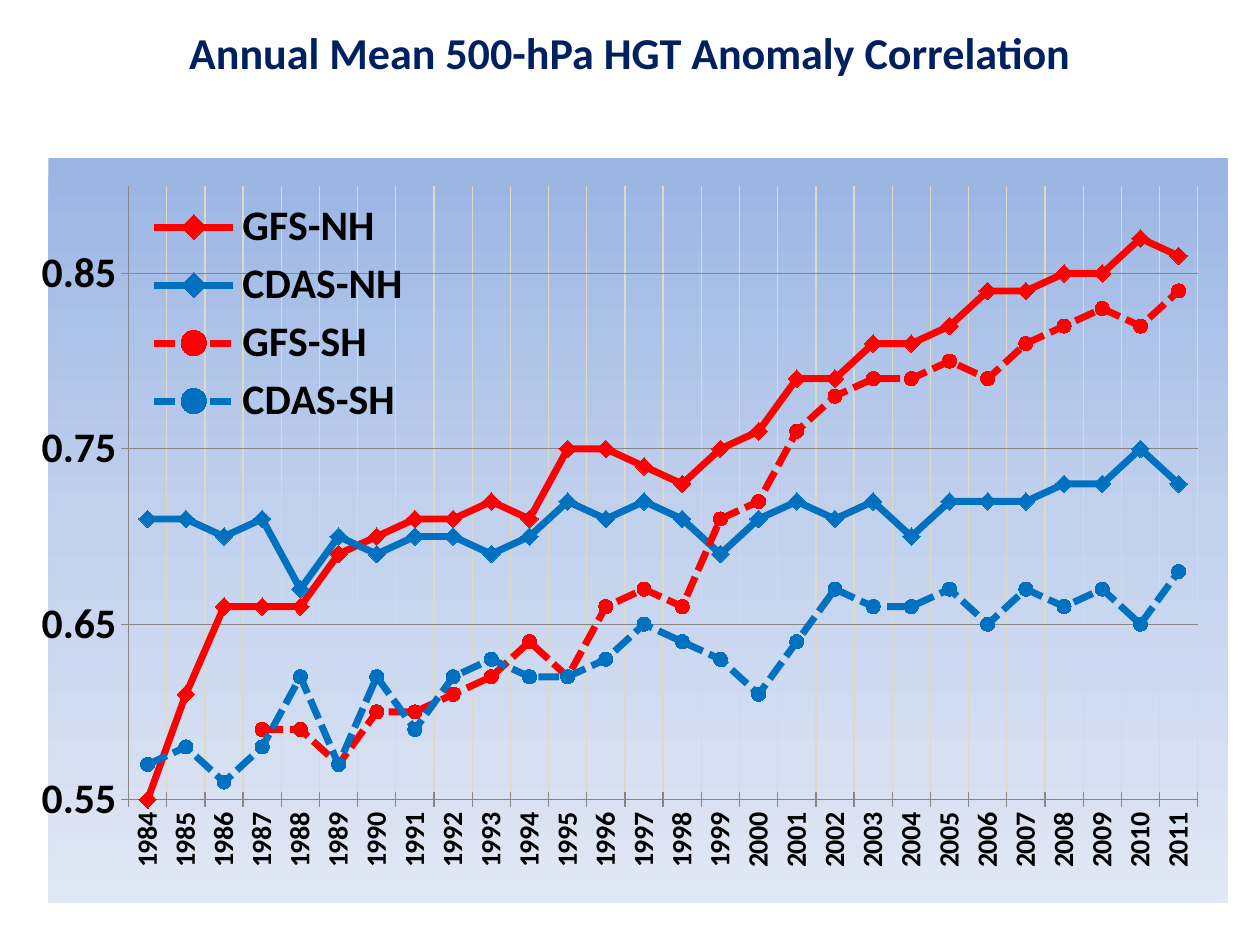
from lxml import etree
from pptx import Presentation
from pptx import util as u
from pptx.chart.data import CategoryChartData
from pptx.dml.color import RGBColor
from pptx.enum import chart as charts, dml, text
from pptx.oxml import parse_xml
from pptx.oxml.ns import nsdecls, qn

FONT = "Calibri"
RED, BLUE = "FF0000", "0070C0"
DIAMOND, CIRCLE = charts.XL_MARKER_STYLE.DIAMOND, charts.XL_MARKER_STYLE.CIRCLE
YEARS = range(1984, 2012)

# name, colour, marker, marker size, dashed, yearly values
SERIES = [
    ("GFS-NH", RED, DIAMOND, 10, False,
     [0.55, 0.61, 0.66, 0.66, 0.66, 0.69, 0.7, 0.71, 0.71, 0.72, 0.71, 0.75, 0.75, 0.74,
      0.73, 0.75, 0.76, 0.79, 0.79, 0.81, 0.81, 0.82, 0.84, 0.84, 0.85, 0.85, 0.87, 0.86]),
    ("CDAS-NH", BLUE, DIAMOND, 10, False,
     [0.71, 0.71, 0.7, 0.71, 0.67, 0.7, 0.69, 0.7, 0.7, 0.69, 0.7, 0.72, 0.71, 0.72,
      0.71, 0.69, 0.71, 0.72, 0.71, 0.72, 0.7, 0.72, 0.72, 0.72, 0.73, 0.73, 0.75, 0.73]),
    ("GFS-SH", RED, CIRCLE, 8, True,
     [None, None, None, 0.59, 0.59, 0.57, 0.6, 0.6, 0.61, 0.62, 0.64, 0.62, 0.66, 0.67,
      0.66, 0.71, 0.72, 0.76, 0.78, 0.79, 0.79, 0.8, 0.79, 0.81, 0.82, 0.83, 0.82, 0.84]),
    ("CDAS-SH", BLUE, CIRCLE, 8, True,
     [0.57, 0.58, 0.56, 0.58, 0.62, 0.57, 0.62, 0.59, 0.62, 0.63, 0.62, 0.62, 0.63, 0.65,
      0.64, 0.63, 0.61, 0.64, 0.67, 0.66, 0.66, 0.67, 0.65, 0.67, 0.66, 0.67, 0.65, 0.68]),
]


def color(value):
    return RGBColor.from_string(value)


def style_font(font, size, value="000000", bold=True):
    font.name, font.size, font.bold = FONT, u.Pt(size), bold
    font.color.rgb = color(value)


def style_line(line, value, width):
    line.color.rgb = color(value)
    line.width = u.Pt(width)


def add_title(slide, wording):
    title = slide.shapes.title
    title.left, title.top = u.Inches(0.5), u.Inches(0.25)
    title.width, title.height = u.Inches(9), u.Inches(0.7)
    frame = title.text_frame
    frame.text = wording
    frame.auto_size = text.MSO_AUTO_SIZE.NONE
    frame.vertical_anchor = text.MSO_ANCHOR.MIDDLE
    frame.margin_top, frame.margin_bottom = 0, u.Inches(0.38)
    paragraph = frame.paragraphs[0]
    paragraph.alignment = text.PP_ALIGN.CENTER
    style_font(paragraph.font, 25.2, "002060")


def set_layout(element, before, left, top, width, height, inner=False):
    """Place a chart part by fractions of the chart area."""
    for old in element.findall(qn("c:layout")):
        element.remove(old)
    layout = etree.Element(qn("c:layout"))
    manual = etree.SubElement(layout, qn("c:manualLayout"))
    settings = [("layoutTarget", "inner")] if inner else []
    settings += [("xMode", "edge"), ("yMode", "edge"),
                 ("x", left), ("y", top), ("w", width), ("h", height)]
    for name, value in settings:
        etree.SubElement(manual, qn("c:" + name)).set("val", str(value))
    if before is None:
        element.insert(0, layout)
    else:
        before.addprevious(layout)


def fill_chart_area(chart, stops):
    """Give the chart area a gradient that runs from top to bottom."""
    marks = "".join(f'<a:gs pos="{position * 1000}"><a:srgbClr val="{value}"/></a:gs>'
                    for position, value in stops)
    properties = parse_xml(
        f'<c:spPr {nsdecls("c", "a")}><a:gradFill><a:gsLst>{marks}</a:gsLst>'
        '<a:lin ang="5400000" scaled="0"/></a:gradFill><a:ln><a:noFill/></a:ln></c:spPr>')
    chart.element.find(qn("c:chart")).addnext(properties)


def style_axis(axis, size, grid_color):
    axis.major_tick_mark = charts.XL_TICK_MARK.CROSS
    axis.has_major_gridlines = True
    style_line(axis.major_gridlines.format.line, grid_color, 0.75)
    style_line(axis.format.line, "868686", 0.75)
    style_font(axis.tick_labels.font, size)


def style_series(series, value, marker, size, dashed):
    series.smooth = False
    style_line(series.format.line, value, 4)
    if dashed:
        series.format.line.dash_style = dml.MSO_LINE.SQUARE_DOT
    series.marker.style, series.marker.size = marker, size
    series.marker.format.fill.solid()
    series.marker.format.fill.fore_color.rgb = color(value)
    series.marker.format.line.color.rgb = color(value)


def add_line_chart(slide):
    data = CategoryChartData(number_format="0.00")
    data.categories = [str(year) for year in YEARS]
    for name, *_, values in SERIES:
        data.add_series(name, values)
    chart = slide.shapes.add_chart(
        charts.XL_CHART_TYPE.LINE_MARKERS, u.Inches(0.33), u.Inches(1.25),
        u.Inches(9.42), u.Inches(5.92), data).chart
    style_font(chart.font, 18, bold=False)
    chart.has_title = False
    chart.plots[0].vary_by_categories = False
    fill_chart_area(chart, [(0, "9AB5E4"), (50, "C2D1ED"), (100, "E1E8F5")])

    # Axes
    years, scores = chart.category_axis, chart.value_axis
    style_axis(years, 16, "DDD9C3")
    style_axis(scores, 24, "868686")
    years.tick_labels.font  # text properties exist before rotation
    years._element.find(qn("c:txPr")).find(qn("a:bodyPr")).set("rot", "-5400000")
    scores.minimum_scale, scores.maximum_scale = 0.55, 0.9
    scores.major_unit = 0.1

    for series, (_, value, marker, size, dashed, _) in zip(chart.series, SERIES):
        style_series(series, value, marker, size, dashed)

    # Legend over the plot
    chart.has_legend = True
    legend = chart.legend
    legend.position = charts.XL_LEGEND_POSITION.RIGHT
    legend.include_in_layout = False
    style_font(legend.font, 24)
    set_layout(legend._element, legend._element.find(qn("c:overlay")), 0.08, 0.05, 0.23, 0.32)
    plot_area = chart.element.find(qn("c:chart")).find(qn("c:plotArea"))
    set_layout(plot_area, None, 0.068, 0.038, 0.906, 0.823, inner=True)


def main():
    presentation = Presentation()
    presentation.slide_width, presentation.slide_height = u.Inches(10), u.Inches(7.5)
    slide = presentation.slides.add_slide(presentation.slide_layouts[5])
    add_title(slide, "Annual Mean 500-hPa HGT Anomaly Correlation")
    add_line_chart(slide)
    presentation.save("out.pptx")


if __name__ == "__main__":
    main()
